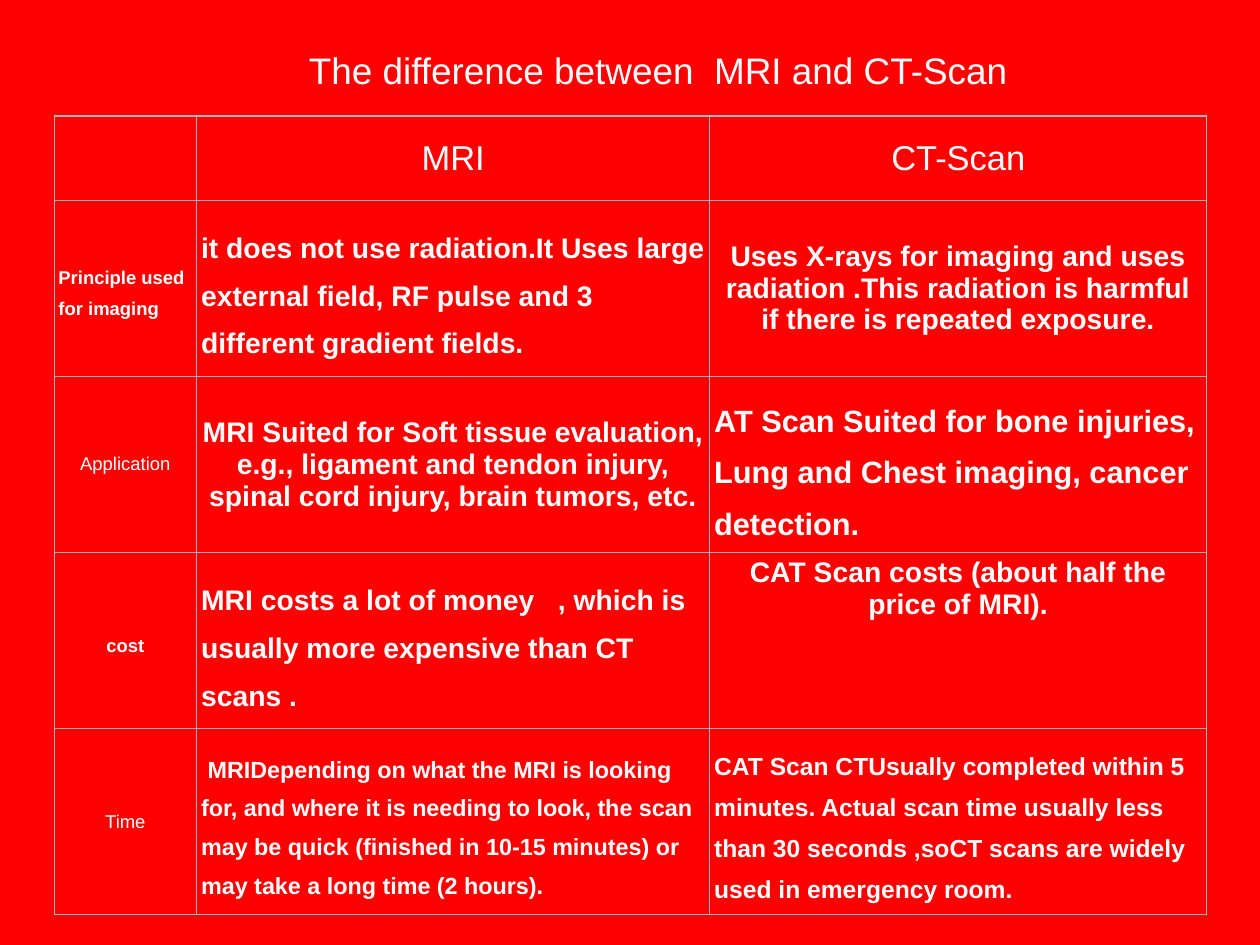
import pptx
import pptx.util
import pptx.dml.color
import pptx.enum.text
import pptx.oxml
import pptx.oxml.ns
from dataclasses import dataclass

ALIGN = pptx.enum.text.PP_ALIGN
ANCHOR = pptx.enum.text.MSO_ANCHOR
WIDTH, HEIGHT = 14.22, 10.67


@dataclass(frozen=True)
class Theme:
    font: str = "Arial"
    back: str = "FF0000"
    text: str = "FFFFFF"
    border: str = "B4B4B4"
    title: int = 30
    head: int = 28
    label: int = 15
    body: int = 23
    large: int = 25
    small: int = 19
    medium: int = 20
    inset: float = 0.05


THEME = Theme()
COLUMNS = [1.61, 5.79, 5.61]
ROWS = [0.95] + [1.99] * 4

# Cell formats: centred single-spaced, or left-aligned and open
HEAD = dict(size=THEME.head)
LABEL = dict(size=THEME.label)
CENTRED = dict(size=THEME.body, bold=True)
OPEN = dict(size=THEME.body, bold=True, align=ALIGN.LEFT, spacing=1.5)

CELLS = [
    [None, ("MRI", HEAD), ("CT-Scan", HEAD)],
    [("Principle used for imaging", OPEN | LABEL),
     ("it does not use radiation.It Uses large external field, RF pulse "
      "and 3 different gradient fields.", OPEN),
     ("Uses X-rays for imaging and uses radiation .This radiation is harmful "
      "if there is repeated exposure.", CENTRED)],
    [("Application", LABEL),
     ("MRI Suited for Soft tissue evaluation, e.g., ligament and tendon injury, "
      "spinal cord injury, brain tumors, etc.", CENTRED),
     ("AT Scan Suited for bone injuries, Lung and Chest imaging, "
      "cancer detection.", OPEN | dict(size=THEME.large))],
    [("cost", CENTRED | LABEL | dict(spacing=1.5)),
     ("MRI costs a lot of money   , which is usually more expensive "
      "than CT scans .", OPEN),
     ("CAT Scan costs (about half the price of MRI).",
      CENTRED | dict(anchor=ANCHOR.TOP))],
    [("Time", LABEL),
     (" MRIDepending on what the MRI is looking for, and where it is needing "
      "to look, the scan may be quick (finished in 10-15 minutes) or may take "
      "a long time (2 hours).", OPEN | dict(size=THEME.small)),
     ("CAT Scan CTUsually completed within 5 minutes. Actual scan time usually "
      "less than 30 seconds ,soCT scans are widely used in emergency room.",
      OPEN | dict(size=THEME.medium))],
]


def rgb(value):
    return pptx.dml.color.RGBColor.from_string(value)


def inches(*values):
    return [pptx.util.Inches(v) for v in values]


def write(tf, text, size, bold=False, align=ALIGN.CENTER, spacing=None,
          anchor=ANCHOR.MIDDLE):
    """Put one formatted paragraph in a text frame."""
    tf.word_wrap = True
    tf.vertical_anchor = anchor
    p = tf.paragraphs[0]
    p.alignment = align
    if spacing:
        p.line_spacing = spacing
    r = p.add_run()
    r.text = text
    r.font.name = THEME.font
    r.font.size = pptx.util.Pt(size)
    r.font.bold = bold
    r.font.color.rgb = rgb(THEME.text)


def set_borders(cell):
    """Draw a thin line on all four sides of a cell."""
    tc_pr = cell._tc.get_or_add_tcPr()
    for i, side in enumerate("LRTB"):
        line = pptx.oxml.parse_xml(
            f'<a:ln{side} {pptx.oxml.ns.nsdecls("a")} w="{pptx.util.Pt(1)}">'
            f'<a:solidFill><a:srgbClr val="{THEME.border}"/></a:solidFill>'
            f'</a:ln{side}>')
        tc_pr.insert(i, line)


def add_title(s, box, text):
    tf = s.shapes.add_textbox(*inches(*box)).text_frame
    tf.margin_left = tf.margin_right = tf.margin_top = tf.margin_bottom = 0
    write(tf, text, THEME.title)


def add_comparison(s, left, top):
    box = inches(left, top, sum(COLUMNS), sum(ROWS))
    table = s.shapes.add_table(len(ROWS), len(COLUMNS), *box).table
    table.first_row = table.horz_banding = False
    for column, width in zip(table.columns, COLUMNS):
        column.width = pptx.util.Inches(width)
    for row, height, contents in zip(table.rows, ROWS, CELLS):
        row.height = pptx.util.Inches(height)
        for cell, content in zip(row.cells, contents):
            cell.fill.solid()
            cell.fill.fore_color.rgb = rgb(THEME.back)
            set_borders(cell)
            inset = pptx.util.Inches(THEME.inset)
            cell.margin_left = cell.margin_right = inset
            cell.margin_top = cell.margin_bottom = inset
            if content:
                text, style = content
                write(cell.text_frame, text, **style)
                cell.vertical_anchor = style.get("anchor", ANCHOR.MIDDLE)


def main():
    prs = pptx.Presentation()
    prs.slide_width, prs.slide_height = inches(WIDTH, HEIGHT)
    s = prs.slides.add_slide(prs.slide_layouts[6])
    s.background.fill.solid()
    s.background.fill.fore_color.rgb = rgb(THEME.back)

    # Title, then the comparison table
    add_title(s, (1.36, 0.16, 12.14, 1.25),
              "The difference between  MRI and CT-Scan")
    add_comparison(s, 0.61, 1.31)
    prs.save("out.pptx")


if __name__ == "__main__":
    main()
